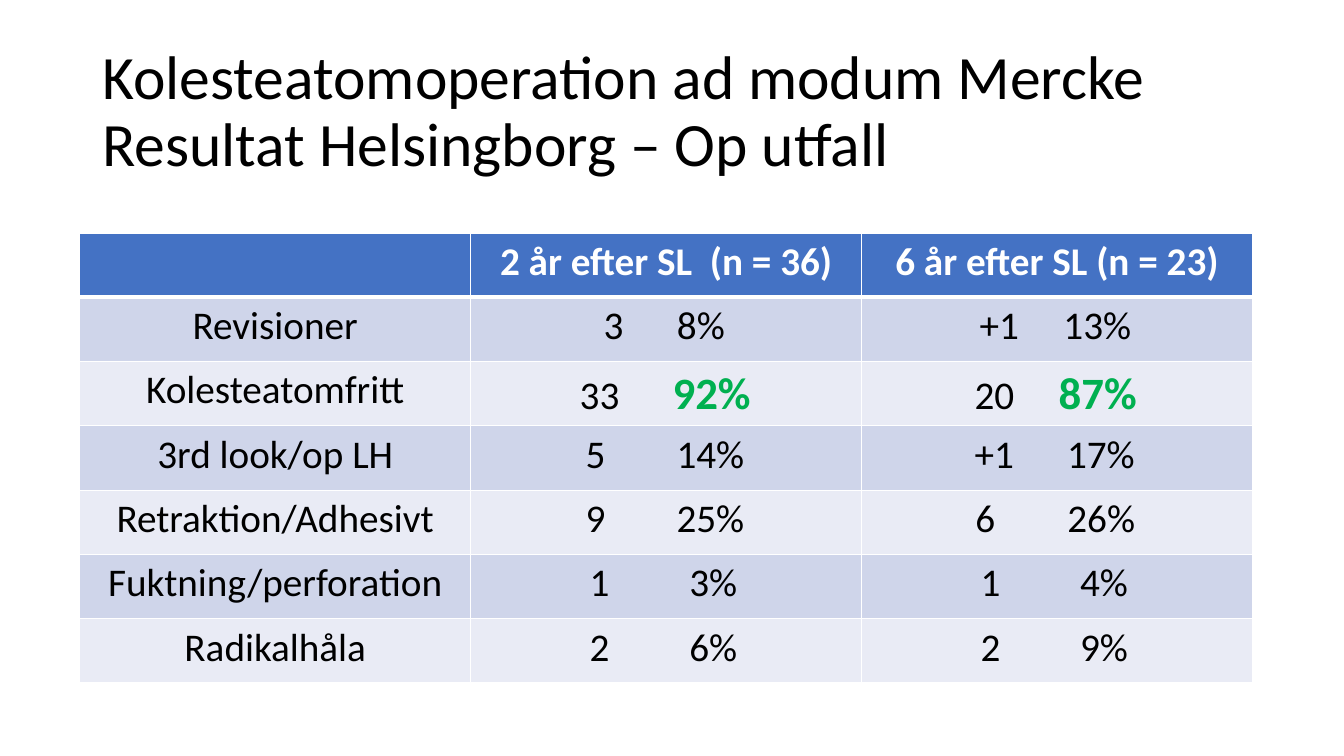
from dataclasses import dataclass
from lxml import etree
from pptx import Presentation
from pptx import util as u
from pptx.dml.color import RGBColor
from pptx.enum import text
from pptx.oxml import ns

BLACK = RGBColor(0, 0, 0)
WHITE = RGBColor(0xFF, 0xFF, 0xFF)
BLUE = RGBColor(0x44, 0x72, 0xC4)
DARK = RGBColor(0xCF, 0xD5, 0xEA)
LIGHT = RGBColor(0xE9, 0xEB, 0xF5)
GREEN = RGBColor(0x00, 0xB0, 0x50)
FONT = "Calibri"
SIDES = ("lnL", "lnR", "lnT", "lnB")


@dataclass
class Pair:
    count: str
    share: str
    left: float
    gap: float


@dataclass
class Row:
    label: str
    two: Pair
    six: Pair
    strong: bool = False


HEADS = ("", "2 år efter SL  (n = 36)", "6 år efter SL (n = 23)")
ROWS = [
    Row("Revisioner", Pair("3", "8%", 3.35, 1.85), Pair("+1", "13%", 2.98, 2.11)),
    Row("Kolesteatomfritt", Pair("33", "92%", 2.75, 2.34), Pair("20", "87%", 2.85, 2.12), True),
    Row("3rd look/op LH", Pair("5", "14%", 2.9, 2.29), Pair("+1", "17%", 2.85, 2.33)),
    Row("Retraktion/Adhesivt", Pair("9", "25%", 2.9, 2.29), Pair("6", "26%", 2.87, 2.32)),
    Row("Fuktning/perforation", Pair("1", "3%", 3, 2.51), Pair("1", "4%", 3, 2.51)),
    Row("Radikalhåla", Pair("2", "6%", 3, 2.51), Pair("2", "9%", 3, 2.51)),
]


def style(run, size: float, color: RGBColor, bold: bool = False) -> None:
    run.font.name = FONT
    run.font.size = u.Pt(size)
    run.font.color.rgb = color
    run.font.bold = bold


def dress(cell, fill: RGBColor, top: float, base: float) -> None:
    props = cell._tc.get_or_add_tcPr()
    for side, width in zip(SIDES, (1, 1, top, base)):
        line = etree.SubElement(props, ns.qn("a:" + side), w=str(u.Pt(width)))
        solid = etree.SubElement(line, ns.qn("a:solidFill"))
        etree.SubElement(solid, ns.qn("a:srgbClr"), val=str(WHITE))
    cell.fill.solid()
    cell.fill.fore_color.rgb = fill


def write(cell, words: str, color: RGBColor, bold: bool = False) -> None:
    para = cell.text_frame.paragraphs[0]
    para.text = words
    para.alignment = text.PP_ALIGN.CENTER
    for run in para.runs:
        style(run, 28, color, bold)


def fill_pair(cell, pair: Pair, strong: bool) -> None:
    cell.margin_left = u.Cm(pair.left)
    para = cell.text_frame.paragraphs[0]
    para.text = pair.count + "\t"
    para.alignment = text.PP_ALIGN.LEFT
    style(para.runs[0], 28, BLACK)
    share = para.add_run()
    share.text = pair.share
    style(share, 32 if strong else 28, GREEN if strong else BLACK, strong)
    tabs = etree.SubElement(para._p.get_or_add_pPr(), ns.qn("a:tabLst"))
    etree.SubElement(tabs, ns.qn("a:tab"), pos=str(u.Cm(pair.gap)), algn="l")


def add_title(slide) -> None:
    box = slide.shapes.add_textbox(u.Cm(2.33), u.Cm(1.01), u.Cm(29.21), u.Cm(3.68))
    frame = box.text_frame
    frame.word_wrap = True
    frame.vertical_anchor = text.MSO_ANCHOR.MIDDLE
    frame.text = "Kolesteatomoperation ad modum Mercke\vResultat Helsingborg – Op utfall"
    para = frame.paragraphs[0]
    para.line_spacing = 0.9
    for run in para.runs:
        style(run, 44, BLACK)


def add_grid(slide) -> None:
    count = len(ROWS) + 1
    frame = slide.shapes.add_table(count, 3, u.Cm(2.01), u.Cm(5.87), u.Cm(29.55), u.Cm(1.62 * count))
    table = frame.table
    for cell, head in zip(table.rows[0].cells, HEADS):
        dress(cell, BLUE, 1, 3)
        write(cell, head, WHITE, True)
    for i, row in enumerate(ROWS):
        cells = list(table.rows[i + 1].cells)
        for cell in cells:
            dress(cell, LIGHT if i % 2 else DARK, 1 if i else 3, 1)
        write(cells[0], row.label, BLACK)
        for cell, pair in zip(cells[1:], (row.two, row.six)):
            fill_pair(cell, pair, row.strong)


def main() -> None:
    deck = Presentation()
    deck.slide_width = u.Cm(33.87)
    deck.slide_height = u.Cm(19.05)
    slide = deck.slides.add_slide(deck.slide_layouts[6])
    add_title(slide)
    add_grid(slide)
    deck.save("out.pptx")


if __name__ == "__main__":
    main()
